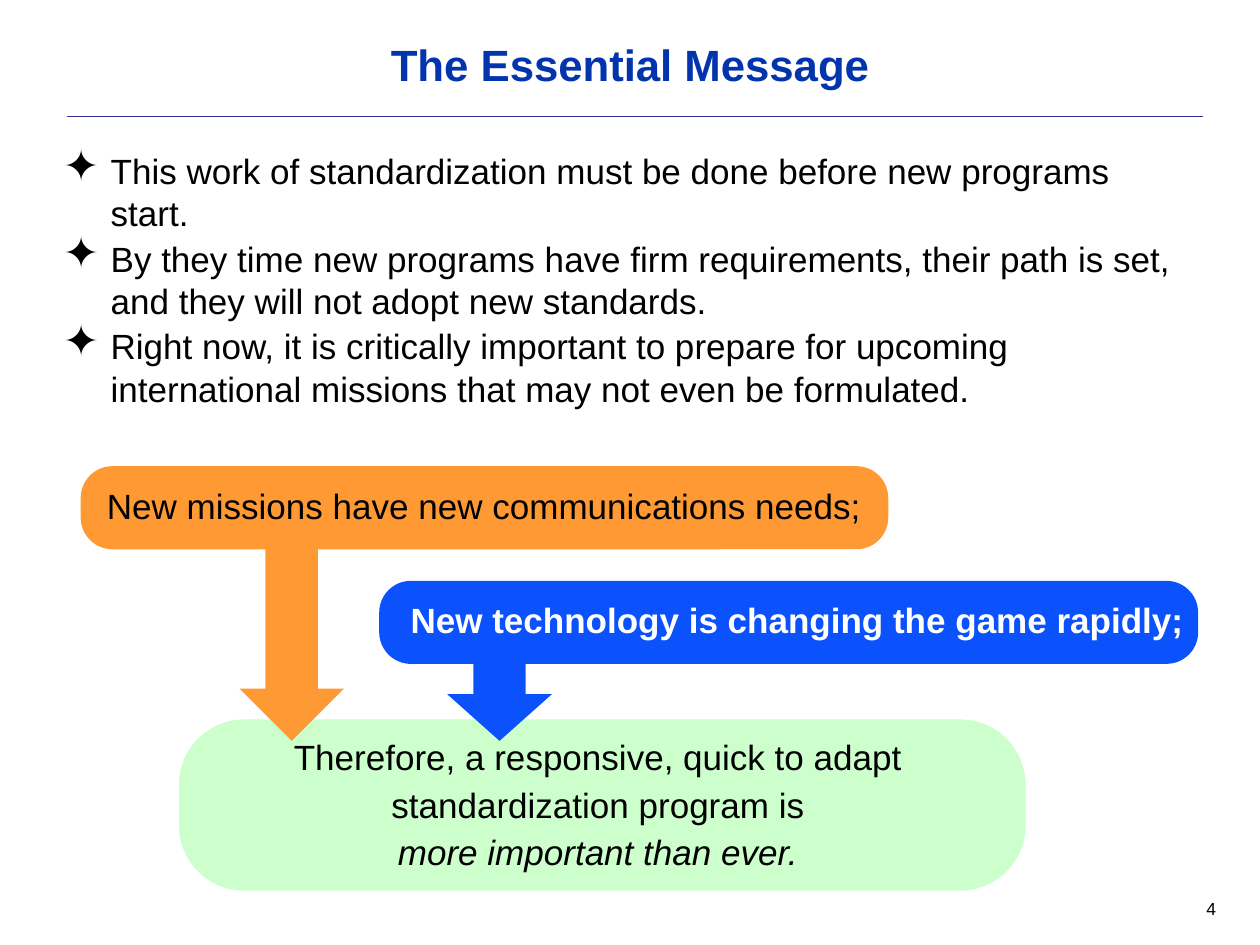
from dataclasses import dataclass

from lxml import etree
from pptx import Presentation
from pptx import util as u
from pptx.dml.color import RGBColor
from pptx.enum import shapes, text
from pptx.oxml.ns import qn

LEFT, CENTER, RIGHT = text.PP_ALIGN.LEFT, text.PP_ALIGN.CENTER, text.PP_ALIGN.RIGHT


@dataclass(frozen=True)
class Theme:
    font: str = "Arial"
    title: str = "0234AD"
    rule: str = "333399"
    ink: str = "000000"
    white: str = "FFFFFF"
    orange: str = "FF9933"
    blue: str = "0B52FC"
    green: str = "CCFFCC"
    title_size: int = 25
    text_size: int = 20
    number_size: int = 10
    gap: int = 3
    bullet_gap: int = 2
    bullet: str = "✦"
    bullet_scale: int = 125000
    indent: float = 0.38


class Builder:
    def __init__(self, slide, theme):
        self.slide = slide
        self.theme = theme

    def rule(self, x1, x2, y):
        ends = [u.Inches(v) for v in (x1, y, x2, y)]
        line = self.slide.shapes.add_connector(shapes.MSO_CONNECTOR.STRAIGHT, *ends)
        line.line.color.rgb = RGBColor.from_string(self.theme.rule)
        line.line.width = u.Pt(0.13)
        etree.SubElement(line._element.spPr, qn("a:effectLst"))

    def block(self, kind, box, color):
        shape = self.slide.shapes.add_shape(kind, *map(u.Inches, box))
        shape.shadow.inherit = False
        shape.fill.solid()
        shape.fill.fore_color.rgb = RGBColor.from_string(color)
        shape.line.fill.background()
        return shape

    def panel(self, box, color):
        shape = self.block(shapes.MSO_SHAPE.ROUNDED_RECTANGLE, box, color)
        shape.adjustments[0] = 0.382

    def arrow(self, box, color):
        self.block(shapes.MSO_SHAPE.DOWN_ARROW, box, color)

    def label(self, box, lines, size=None, color=None, align=LEFT, bold=False,
              italic_last=False, bullets=False, gap=0, spacing=None):
        frame = self.slide.shapes.add_textbox(*map(u.Inches, box)).text_frame
        frame.word_wrap = True
        for index, line in enumerate(lines):
            paragraph = frame.paragraphs[0] if index == 0 else frame.add_paragraph()
            if bullets:
                self.add_bullet(paragraph)
            paragraph.alignment = align
            paragraph.space_after = u.Pt(gap)
            if spacing:
                paragraph.line_spacing = spacing
            run = paragraph.add_run()
            run.text = line
            run.font.name = self.theme.font
            run.font.size = u.Pt(size or self.theme.text_size)
            run.font.bold = bold
            run.font.italic = italic_last and index == len(lines) - 1
            run.font.color.rgb = RGBColor.from_string(color or self.theme.ink)

    def add_bullet(self, paragraph):
        properties = paragraph._p.get_or_add_pPr()
        indent = u.Inches(self.theme.indent)
        properties.set("marL", str(indent))
        properties.set("indent", str(-indent))
        etree.SubElement(properties, qn("a:buSzPct"), val=str(self.theme.bullet_scale))
        etree.SubElement(properties, qn("a:buChar"), char=self.theme.bullet)


def main():
    theme = Theme()
    presentation = Presentation()
    presentation.slide_width = u.Inches(10)
    presentation.slide_height = u.Inches(7.5)
    slide = presentation.slides.add_slide(presentation.slide_layouts[6])
    builder = Builder(slide, theme)

    # Rule and panels
    builder.rule(0.53, 9.55, 0.92)
    builder.panel((1.42, 5.71, 6.72, 1.36), theme.green)
    builder.panel((3.01, 4.61, 6.5, 0.66), theme.blue)
    builder.panel((0.64, 3.7, 6.41, 0.66), theme.orange)

    # Title, bullets and page number
    builder.label((0.5, 0.3, 9, 0.62), ["The Essential Message"], theme.title_size,
                  theme.title, CENTER, bold=True, spacing=0.9)
    builder.label((0.4, 1.14, 9.19, 1.85), [
        "This work of standardization must be done before new programs start.",
        "By they time new programs have firm requirements, their path is set, "
        "and they will not adopt new standards.",
        "Right now, it is critically important to prepare for upcoming "
        "international missions that may not even be formulated.",
    ], bullets=True, gap=theme.bullet_gap)
    builder.label((7.42, 7.08, 2.33, 0.25), ["4"], theme.number_size, align=RIGHT)

    # Panel texts
    builder.label((0.75, 3.8, 6.3, 0.43), ["New missions have new communications needs;"])
    builder.label((3.16, 4.7, 6.35, 0.57), ["New technology is changing the game rapidly;"],
                  color=theme.white, bold=True)
    builder.label((0.97, 5.79, 7.63, 1.29), [
        "Therefore, a responsive, quick to adapt ",
        "standardization program is ",
        "more important than ever. ",
    ], align=CENTER, italic_last=True, gap=theme.gap)

    # Arrows into the conclusion
    builder.arrow((1.9, 4.23, 0.83, 1.65), theme.orange)
    builder.arrow((3.55, 5.14, 0.83, 0.74), theme.blue)

    presentation.save("out.pptx")


if __name__ == "__main__":
    main()
